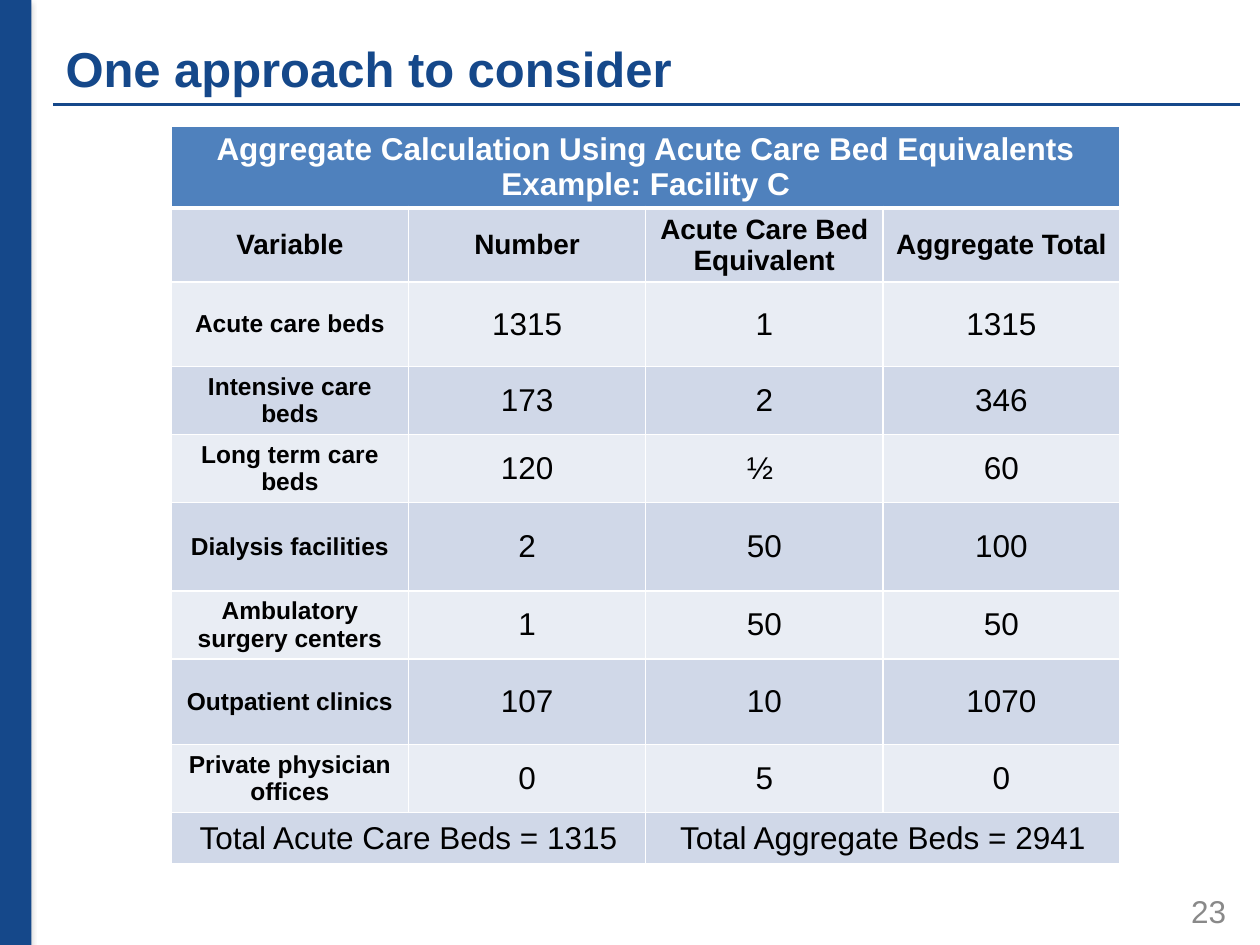
import pptx
import pptx.util
import pptx.dml.color
import pptx.enum.shapes
import pptx.enum.text
import pptx.oxml
import pptx.oxml.ns

NAVY, WHITE, BLACK, GREY = "15488A", "FFFFFF", "000000", "898989"
HEADER_BLUE, DARK_BAND, LIGHT_BAND = "4F81BD", "D0D8E8", "E9EDF4"
NAMESPACE = pptx.oxml.ns.nsdecls("a")
ALIGN = pptx.enum.text.PP_ALIGN


def color(hex_code):
    return pptx.dml.color.RGBColor.from_string(hex_code)


def write(frame, text, size=18, ink=BLACK, bold=False, align=ALIGN.CENTER):
    """Fill a text frame, one paragraph for each line of text."""
    frame.word_wrap = True
    for index, line in enumerate(text.split("\n")):
        para = frame.paragraphs[0] if index == 0 else frame.add_paragraph()
        para.alignment = align
        span = para.add_run()
        span.text = line
        span.font.name = "Arial"
        span.font.size = pptx.util.Pt(size)
        span.font.bold = bold
        span.font.color.rgb = color(ink)


# Page, measured in hundredths of its width and height
deck = pptx.Presentation()
deck.slide_width = pptx.util.Inches(10)
deck.slide_height = pptx.util.Inches(7.5)
column = deck.slide_width // 100
row = deck.slide_height // 100
page = deck.slides.add_slide(deck.slide_layouts[5])

# Side bar with a soft shadow
bar = page.shapes.add_shape(pptx.enum.shapes.MSO_SHAPE.RECTANGLE,
                            0, 0, int(2.5 * column), 100 * row)
bar.fill.solid()
bar.fill.fore_color.rgb = color(NAVY)
bar.line.fill.background()
bar._element.spPr.append(pptx.oxml.parse_xml(
    f'<a:effectLst {NAMESPACE}><a:outerShdw blurRad="39370" dist="22860" dir="5400000" '
    'rotWithShape="0"><a:srgbClr val="808080"><a:alpha val="35000"/></a:srgbClr>'
    '</a:outerShdw></a:effectLst>'))

# Rule under the title
left, right, rule_top = int(4.2 * column), int(98.4 * column), int(11.07 * row)
rule = page.shapes.add_connector(pptx.enum.shapes.MSO_CONNECTOR.STRAIGHT,
                                 left, rule_top, right, rule_top)
rule.line.color.rgb = color(NAVY)
rule.line.width = pptx.util.Pt(2)
rule._element.spPr.append(pptx.oxml.parse_xml(f"<a:effectLst {NAMESPACE}/>"))

# Title
title = page.shapes.title
title.left, title.top = left, int(3.33 * row)
title.width, title.height = right - left, rule_top - title.top
title.text_frame.vertical_anchor = pptx.enum.text.MSO_ANCHOR.MIDDLE
write(title.text_frame, "One approach to consider", size=28, ink=NAVY, bold=True,
      align=ALIGN.LEFT)

# Table: None continues a merged cell
rows = [
    ["Aggregate Calculation Using Acute Care Bed Equivalents\nExample: Facility C",
     None, None, None],
    ["Variable", "Number", "Acute Care Bed Equivalent", "Aggregate Total"],
    ["Acute care beds", "1315", "1", "1315"],
    ["Intensive care beds", "173", "2", "346"],
    ["Long term care beds", "120", "½ ", "60"],
    ["Dialysis facilities", "2", "50", "100"],
    ["Ambulatory surgery centers", "1", "50", "50"],
    ["Outpatient clinics", "107", "10", "1070"],
    ["Private physician offices", "0", "5", "0"],
    ["Total Acute Care Beds = 1315", None, "Total Aggregate Beds = 2941", None],
]
heights = [0.65, 0.59, 0.67, 0.54, 0.54, 0.7, 0.54, 0.68, 0.54, 0.41]
last = len(rows) - 1
table = page.shapes.add_table(len(rows), 4, int(13.6 * column), int(13.33 * row),
                              int(75.3 * column), pptx.util.Inches(sum(heights))).table
table.cell(0, 0).merge(table.cell(0, 3))
for start in (0, 2):
    table.cell(last, start).merge(table.cell(last, start + 1))

for r, texts in enumerate(rows):
    table.rows[r].height = pptx.util.Inches(heights[r])
    for c, text in enumerate(texts):
        cell = table.cell(r, c)
        # White borders, thicker below the heading
        for side in "LRTB":
            heavy = (side == "B" and r == 0) or (side == "T" and r == 1)
            cell._tc.get_or_add_tcPr().append(pptx.oxml.parse_xml(
                f'<a:ln{side} {NAMESPACE} w="{38100 if heavy else 12700}"><a:solidFill>'
                f'<a:srgbClr val="{WHITE}"/></a:solidFill></a:ln{side}>'))
        cell.fill.solid()
        cell.fill.fore_color.rgb = color(
            HEADER_BLUE if r == 0 else DARK_BAND if r % 2 else LIGHT_BAND)
        cell.vertical_anchor = pptx.enum.text.MSO_ANCHOR.MIDDLE
        cell.margin_left = cell.margin_right = pptx.util.Inches(0.08)
        cell.margin_top = cell.margin_bottom = pptx.util.Inches(0.04)
        if text is None:
            continue
        label = c == 0 and 1 < r < last
        write(cell.text_frame, text, size=16 if r == 1 else 14 if label else 18,
              ink=WHITE if r == 0 else BLACK, bold=r < 2 or label)

# Page number
number = page.shapes.add_textbox(75 * column, 95 * row, int(23.3 * column), int(2.67 * row))
number.text_frame.vertical_anchor = pptx.enum.text.MSO_ANCHOR.MIDDLE
write(number.text_frame, "23", ink=GREY, align=ALIGN.RIGHT)

deck.save("out.pptx")
